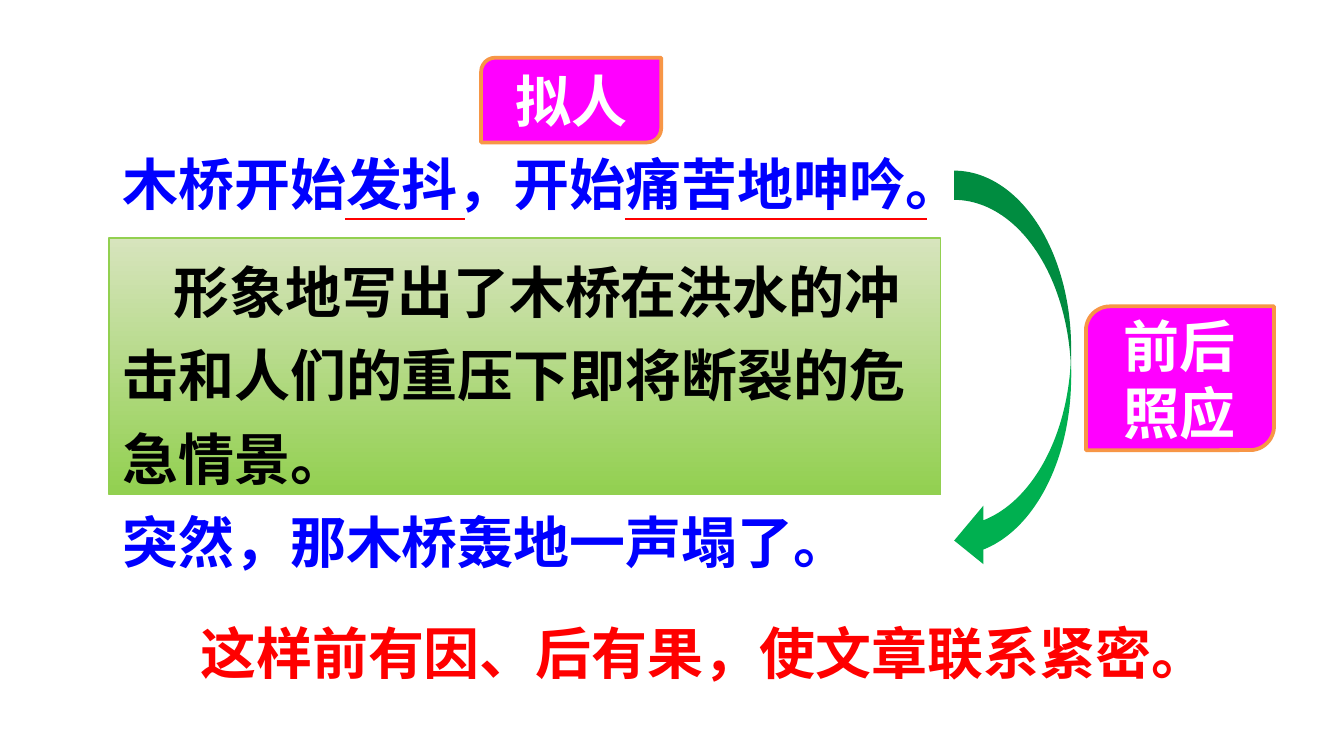
import pptx
import pptx.util
import pptx.dml.color
import pptx.enum.shapes
import pptx.enum.text
import pptx.oxml
import pptx.oxml.ns

Inches, Pt = pptx.util.Inches, pptx.util.Pt
PRESET = pptx.enum.shapes.MSO_SHAPE
ALIGN = pptx.enum.text.PP_ALIGN
ANCHOR = pptx.enum.text.MSO_ANCHOR
GROW = pptx.enum.text.MSO_AUTO_SIZE.SHAPE_TO_FIT_TEXT

COLORS = {
    "quote": "0000FF", "conclusion": "FF0000", "underline": "FF0000",
    "badge": "FF00FF", "badge_edge": "F79646", "badge_text": "FFFFFF",
    "panel_top": "D7E4BD", "panel_bottom": "92D050", "panel_text": "000000",
    "arrow": "00B050",
}
CJK = "Noto Sans CJK SC"
LATIN = "Calibri"

SENTENCES = [
    ("木桥开始发抖，开始痛苦地呻吟。", (0.81, 1.06, 7.39, 0.61), "quote", True),
    ("突然，那木桥轰地一声塌了。", (0.81, 3.73, 7.39, 0.61), "quote", True),
    ("这样前有因、后有果，使文章联系紧密。", (1.39, 4.55, 7.81, 0.61), "conclusion", False),
]
BADGES = [
    ("前后照应", (8.08, 2.28, 1.4, 1.07)),
    ("拟人", (3.58, 0.43, 1.34, 0.63)),
]
EXPLANATION = "形象地写出了木桥在洪水的冲击和人们的重压下即将断裂的危急情景。"
EXPLANATION_BOX = (0.81, 1.77, 6.19, 1.91)
ARROW_BOX = (7.1, 1.27, 0.87, 2.97)
UNDERLINES = [(2.57, 3.46), (4.65, 6.9)]
UNDERLINE_Y = 1.63


def rgb(name):
    return pptx.dml.color.RGBColor.from_string(COLORS[name])


def inches(box):
    return [Inches(length) for length in box]


def apply(target, values):
    for name, value in values.items():
        setattr(target, name, value)


def write(shape, words, color, font, frame_format, paragraph_format):
    apply(shape.text_frame, frame_format)
    paragraph = shape.text_frame.paragraphs[0]
    apply(paragraph, paragraph_format)
    run = paragraph.add_run()
    run.text = words
    apply(run.font, {"name": font, "size": Pt(30), "bold": True})
    run.font.color.rgb = rgb(color)
    east_asian = pptx.oxml.parse_xml(
        f'<a:ea {pptx.oxml.ns.nsdecls("a")} typeface="{CJK}"/>')
    run.font._element.append(east_asian)
    return paragraph


def add_preset(slide, preset, box, fill=None, edge=None, width=0.75):
    shape = slide.shapes.add_shape(preset, *inches(box))
    shape.shadow.inherit = False
    if fill:
        shape.fill.solid()
        shape.fill.fore_color.rgb = rgb(fill)
    if edge:
        shape.line.color.rgb = rgb(edge)
        shape.line.width = Pt(width)
    else:
        shape.line.fill.background()
    return shape


def add_sentence(slide, words, box, color, wraps):
    sentence = slide.shapes.add_textbox(*inches(box))
    write(sentence, words, color, CJK, {"word_wrap": wraps, "auto_size": GROW}, {})


def add_badge(slide, words, box):
    badge = add_preset(slide, PRESET.ROUND_2_DIAG_RECTANGLE, box, "badge", "badge_edge", 2)
    write(badge, words, "badge_text", LATIN,
          {"word_wrap": True, "vertical_anchor": ANCHOR.MIDDLE},
          {"alignment": ALIGN.CENTER})


def add_explanation(slide):
    panel = add_preset(slide, PRESET.RECTANGLE, EXPLANATION_BOX, edge="panel_bottom")
    panel.fill.gradient()
    panel.fill.gradient_angle = 270
    for stop, color in zip(panel.fill.gradient_stops, ("panel_top", "panel_bottom")):
        stop.color.rgb = rgb(color)
    paragraph = write(panel, EXPLANATION, "panel_text", CJK,
                      {"word_wrap": True, "auto_size": GROW,
                       "vertical_anchor": ANCHOR.MIDDLE},
                      {"alignment": ALIGN.LEFT, "line_spacing": 1.25})
    paragraph._p.get_or_add_pPr().set("indent", str(Inches(0.38)))


def add_underline(slide, start, end):
    underline = slide.shapes.add_connector(
        pptx.enum.shapes.MSO_CONNECTOR.STRAIGHT,
        *inches((start, UNDERLINE_Y, end, UNDERLINE_Y)))
    underline.line.color.rgb = rgb("underline")
    underline.line.width = Pt(1.5)
    underline._element.spPr.append(
        pptx.oxml.parse_xml(f'<a:effectLst {pptx.oxml.ns.nsdecls("a")}/>'))


def main():
    deck = pptx.Presentation()
    width = Inches(10)
    apply(deck, {"slide_width": width, "slide_height": width * 9 // 16})
    slide = deck.slides.add_slide(deck.slide_layouts[6])
    opening, *later_sentences = SENTENCES
    echo_badge, device_badge = BADGES
    add_sentence(slide, *opening)
    add_badge(slide, *echo_badge)
    add_explanation(slide)
    add_preset(slide, PRESET.CURVED_LEFT_ARROW, ARROW_BOX, "arrow")
    for start, end in UNDERLINES:
        add_underline(slide, start, end)
    add_badge(slide, *device_badge)
    for sentence in later_sentences:
        add_sentence(slide, *sentence)
    deck.save("out.pptx")


if __name__ == "__main__":
    main()
